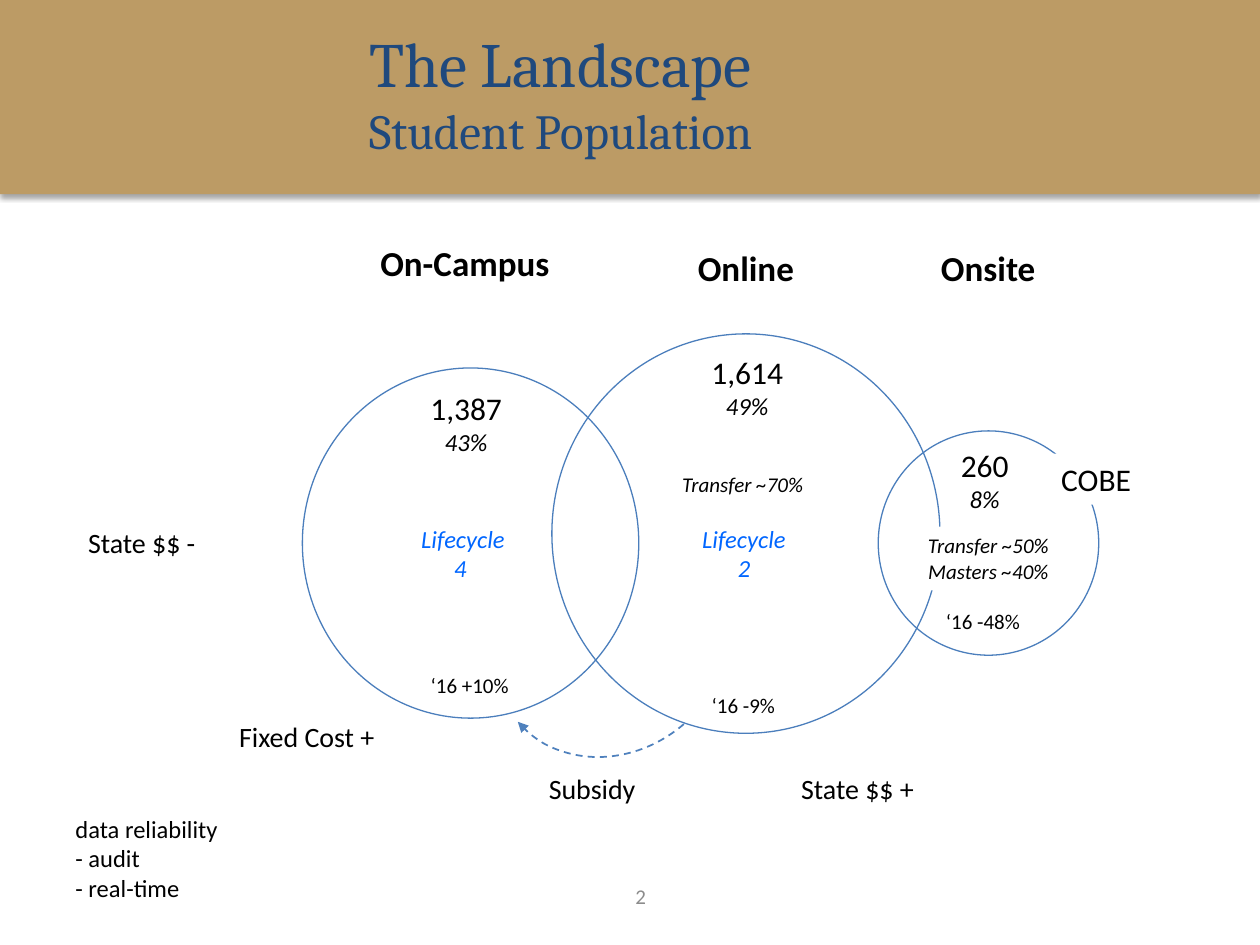
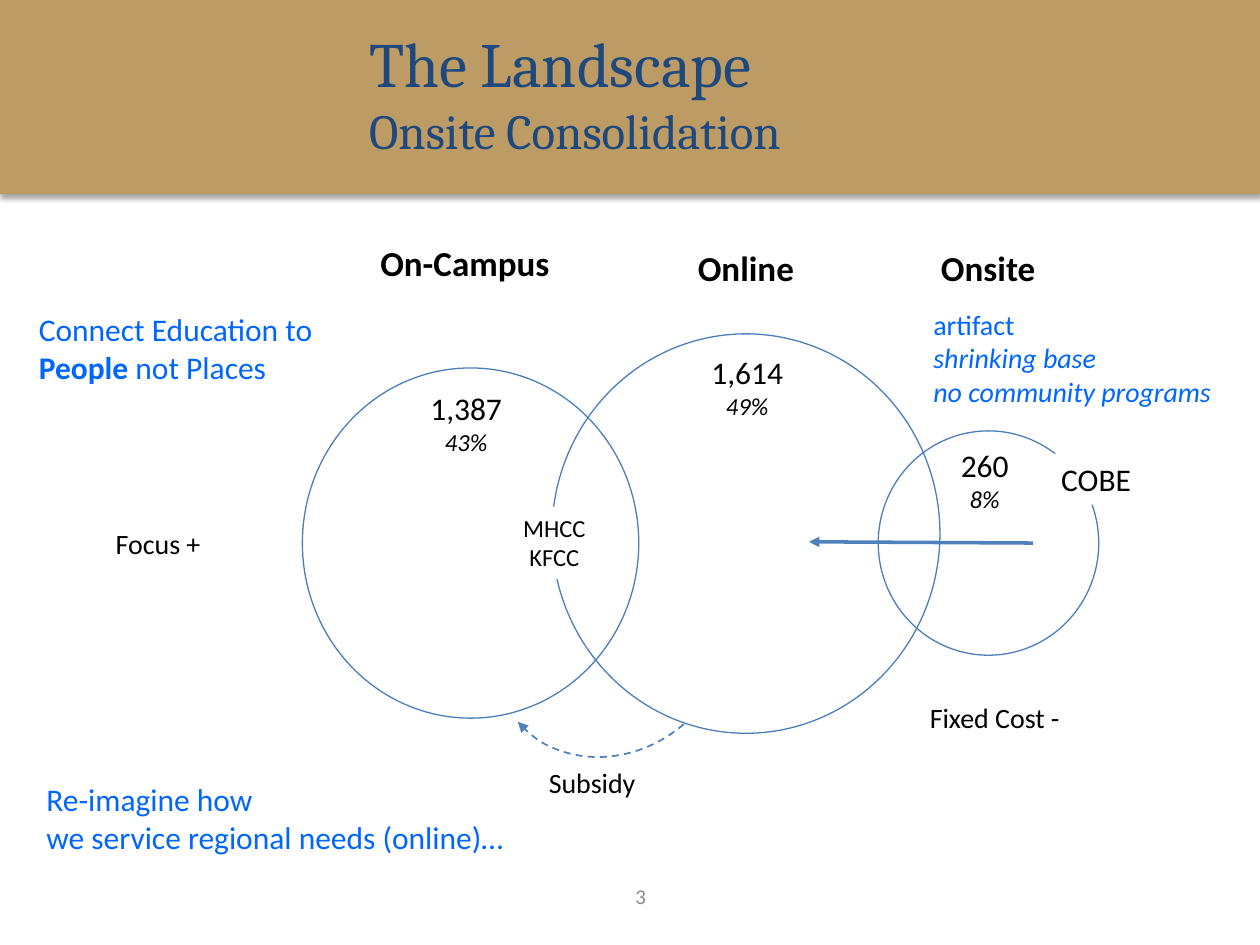
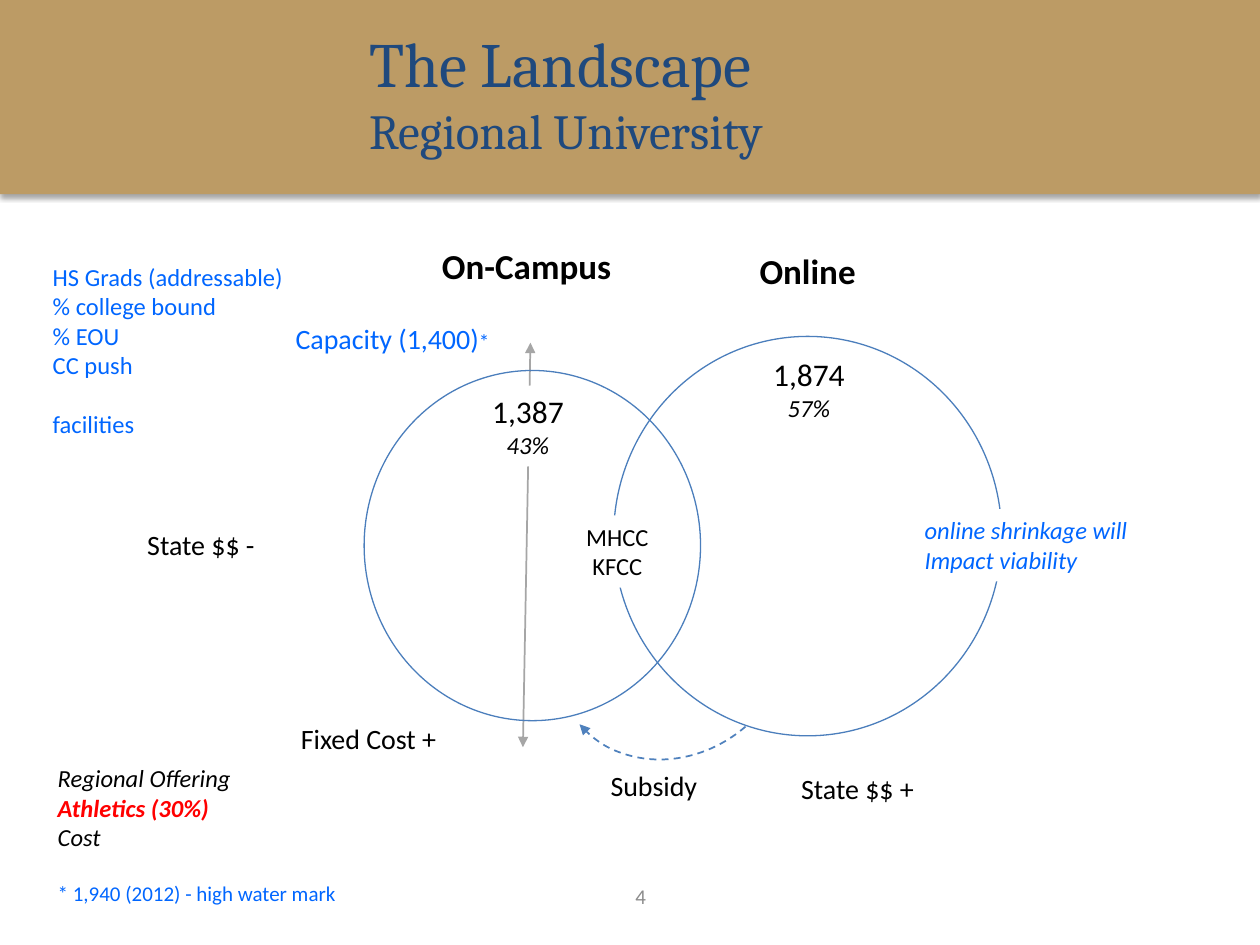
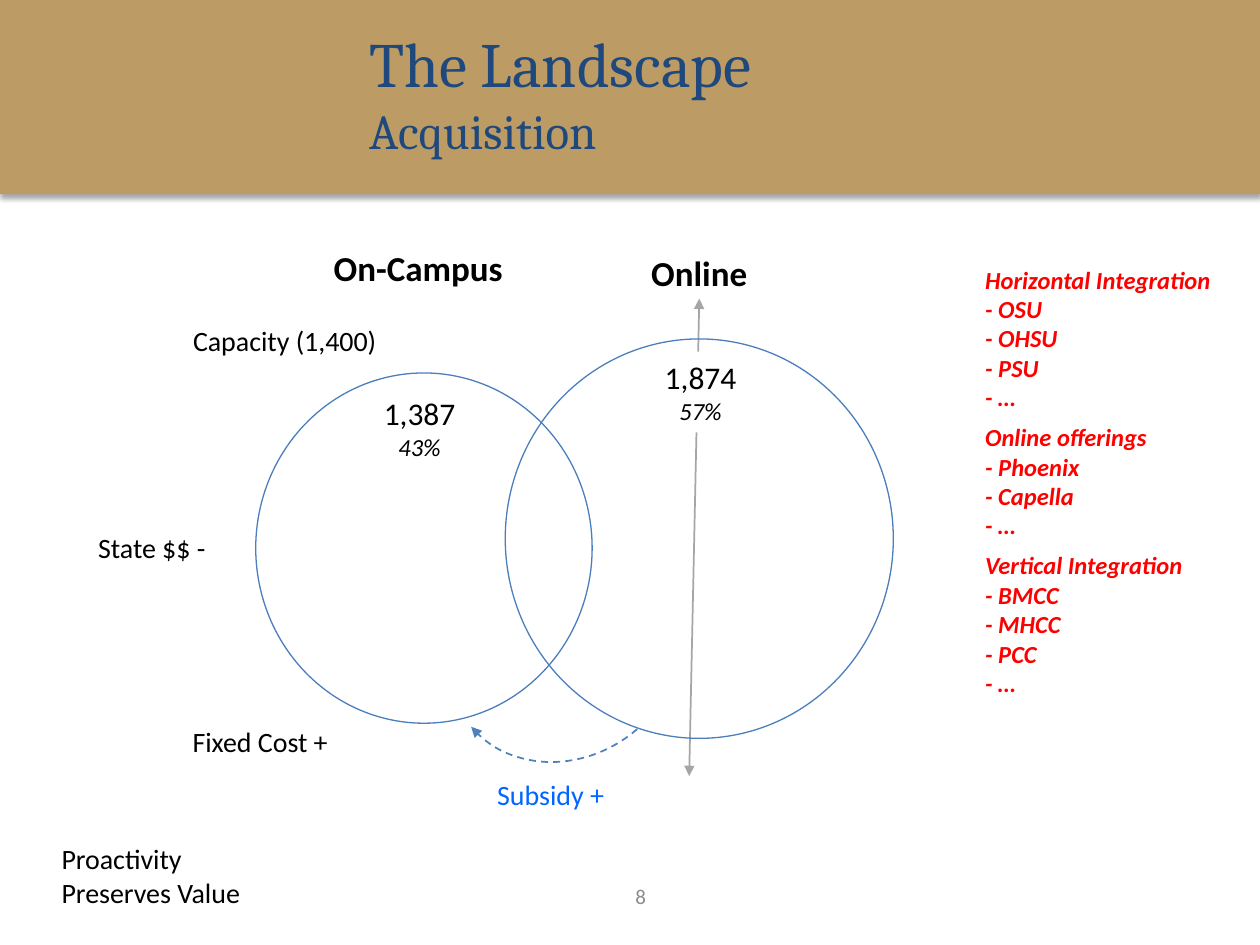
"""Build four slides on the student landscape."""
import lxml.etree
import pptx
import pptx.dml.color
import pptx.enum.dml
import pptx.enum.shapes
import pptx.enum.text
import pptx.oxml.ns
import pptx.util

GOLD = pptx.dml.color.RGBColor(0xBC, 0x9B, 0x65)
NAVY = pptx.dml.color.RGBColor(0x1F, 0x49, 0x7D)
RING = pptx.dml.color.RGBColor(0x4B, 0x7E, 0xBC)
BLUE = pptx.dml.color.RGBColor(0x4F, 0x81, 0xBD)
VIVID = pptx.dml.color.RGBColor(0x00, 0x66, 0xFF)
RED = pptx.dml.color.RGBColor(0xFF, 0x00, 0x00)
GREY = pptx.dml.color.RGBColor(0xA6, 0xA6, 0xA6)
DIM = pptx.dml.color.RGBColor(0x8C, 0x8C, 0x8C)
BLACK = pptx.dml.color.RGBColor(0x00, 0x00, 0x00)
WHITE = pptx.dml.color.RGBColor(0xFF, 0xFF, 0xFF)

LEFT = pptx.enum.text.PP_ALIGN.LEFT
MID = pptx.enum.text.PP_ALIGN.CENTER
SHAPE = pptx.enum.shapes.MSO_SHAPE
LEADING = 1.22


def inches(*sizes):
    """Turn numbers into lengths."""
    return [pptx.util.Inches(size) for size in sizes]


def child(parent, tag, **attrs):
    """Add a drawing element to its parent."""
    return lxml.etree.SubElement(parent, pptx.oxml.ns.qn(tag), attrs)


def write(para, text, size, hue, face="Calibri", bold=False, italic=False):
    """Add one run to a paragraph."""
    run = para.add_run()
    run.text = text
    font = run.font
    font.name, font.size = face, pptx.util.Pt(size)
    font.bold, font.italic = bold, italic
    font.color.rgb = hue


def note(slide, left, top, width, lines, size=16, hue=BLACK, align=LEFT,
         fill=None, wrap=False, gaps=None, **style):
    """Add a text box as tall as its lines; a line is a run or a list of runs."""
    gaps = gaps or {}
    rows = [line if isinstance(line, list) else [line] for line in lines]
    rows = [[(run, {}) if isinstance(run, str) else run for run in row] for row in rows]
    points = sum(max(look.get("size", size) for _, look in row) for row in rows)
    height = (points * LEADING + sum(gaps.values())) / 72 + 0.1
    box = slide.shapes.add_textbox(*inches(left, top, width, height))
    if fill is not None:
        box.fill.solid()
        box.fill.fore_color.rgb = fill
    frame = box.text_frame
    frame.word_wrap = wrap
    frame.auto_size = pptx.enum.text.MSO_AUTO_SIZE.SHAPE_TO_FIT_TEXT
    for index, row in enumerate(rows):
        para = frame.paragraphs[0] if index == 0 else frame.add_paragraph()
        para.alignment = align
        if index in gaps:
            para.space_before = pptx.util.Pt(gaps[index])
        for text, look in row:
            write(para, text, **{"size": size, "hue": hue, **style, **look})


def stroke(shape, hue, width, head=False, tail=False, dash=None):
    """Style a line and its arrowheads."""
    shape.line.color.rgb = hue
    shape.line.width = pptx.util.Pt(width)
    if dash:
        shape.line.dash_style = dash
    edge = shape.element.spPr.find(pptx.oxml.ns.qn("a:ln"))
    for tag, wanted in (("a:headEnd", head), ("a:tailEnd", tail)):
        if wanted:
            child(edge, tag, type="triangle")


def arrow(slide, start, end, hue, width, head=False):
    """Draw a straight arrow."""
    kind = pptx.enum.shapes.MSO_CONNECTOR.STRAIGHT
    line = slide.shapes.add_connector(kind, *inches(*start, *end))
    stroke(line, hue, width, head, True)
    child(line.element.spPr, "a:effectLst")


def outline(slide, kind, left, top, width, height):
    """Add an unfilled shape without shadow."""
    shape = slide.shapes.add_shape(kind, *inches(left, top, width, height))
    shape.shadow.inherit = False
    shape.fill.background()
    return shape


def ring(slide, left, top, width, height):
    """Draw one circle of the diagram."""
    stroke(outline(slide, SHAPE.OVAL, left, top, width, height), RING, 0.75)


def band(slide, layout):
    """Put the gold band on the layout behind everything."""
    bar = slide.shapes.add_shape(SHAPE.RECTANGLE, *inches(0, -0.01, 10, 1.55))
    bar.fill.solid()
    bar.fill.fore_color.rgb = GOLD
    bar.line.fill.background()
    bar.shadow.inherit = False
    effects = bar.element.spPr.find(pptx.oxml.ns.qn("a:effectLst"))
    shade = child(effects, "a:outerShdw", blurRad="39370", dist="22860",
                  dir="5400000", rotWithShape="0")
    child(child(shade, "a:srgbClr", val="000000"), "a:alpha", val="35000")
    bar.element.nvSpPr.cNvPr.id = 99
    layout.shapes.element.insert(2, bar.element)


def page(deck, topic, number):
    """Add a slide with its title and page number."""
    layout = deck.slide_layouts[5]
    slide = deck.slides.add_slide(layout)
    if len(deck.slides) == 1:
        band(slide, layout)
    title = slide.shapes.title
    title.left, title.top, title.width, title.height = inches(2.83, 0.16, 6.92, 1.14)
    frame = title.text_frame
    frame.word_wrap = True
    frame.auto_size = pptx.enum.text.MSO_AUTO_SIZE.NONE
    frame.vertical_anchor = pptx.enum.text.MSO_ANCHOR.MIDDLE
    for para, text, size in ((frame.paragraphs[0], "The Landscape", 36),
                             (frame.add_paragraph(), topic, 28)):
        para.alignment = LEFT
        write(para, text, size, NAVY, "Cambria")
    note(slide, 3.92, 6.96, 2.33, [number], 12, DIM, MID, wrap=True)
    return slide


def count(slide, left, top, width, total, share, fill=None):
    """Write a head count over its share."""
    note(slide, left, top, width, [total, (share, {"size": 14, "italic": True})],
         18, align=MID, fill=fill)


def venn(slide, left, top, online, share, fills=(None, None)):
    """Draw the campus and online circles with the subsidy arc."""
    ring(slide, left, top + 1.05, 2.67, 2.78)
    ring(slide, left + 1.98, top + 0.78, 3.08, 3.17)
    note(slide, left + 0.52, top, 1.56, ["On-Campus"], 20, bold=True)
    note(slide, left + 3.04, top + 0.04, 0.97, ["Online"], 20, bold=True)
    count(slide, left + 0.91, top + 1.17, 0.78, "1,387", "43%", fills[0])
    count(slide, left + 3.14, top + 0.88, 0.78, online, share, fills[1])
    arc = outline(slide, SHAPE.ARC, left + 1.47, top + 2.34, 1.97, 1.75)
    arc.rotation = 139.2
    stroke(arc, BLUE, 1, tail=True, dash=pptx.enum.dml.MSO_LINE.DASH)


def onsite(slide, left, top):
    """Draw the onsite circle with its heading and labels."""
    note(slide, left + 0.4, top, 0.96, ["Onsite"], 20, bold=True)
    ring(slide, left, top + 1.51, 1.75, 1.78)
    count(slide, left + 0.55, top + 1.58, 0.59, "260", "8%")
    note(slide, left + 1.35, top + 1.69, 0.76, ["COBE"], 18, align=MID, fill=WHITE)


def subsidy(slide, left, top, text="Subsidy", width=0.9, hue=BLACK):
    """Label the subsidy arc."""
    note(slide, left, top, width, [text], hue=hue, align=MID)


def fixed(slide, left, top, text="Fixed Cost + ", width=1.34):
    """Label the fixed cost."""
    note(slide, left, top, width, [text], align=MID)


def shared(slide, left, top):
    """Name the colleges in the overlap."""
    note(slide, left, top, 0.7, ["MHCC", "KFCC"], 14, align=MID, fill=WHITE)


def people(deck):
    """Build the student population slide."""
    slide = page(deck, "Student Population", "2")
    venn(slide, 2.4, 1.87, "1,614", "49%")
    onsite(slide, 6.97, 1.91)
    for left, top, width, text in ((7.41, 4.78, 0.8, "‘16 -48%"),
                                   (5.55, 5.45, 0.71, "‘16 -9%"),
                                   (3.32, 5.29, 0.83, "‘16 +10%")):
        note(slide, left, top, width, [text], 12)
    for left, cycle in ((3.24, "4 "), (5.47, "2")):
        note(slide, left, 4.11, 0.87, ["Lifecycle", cycle], 14, VIVID, MID, italic=True)
    note(slide, 0.6, 4.12, 1.11, [["State $$ -", (" ", {"size": 14, "italic": True})]])
    fixed(slide, 1.79, 5.66)
    subsidy(slide, 4.25, 6.07)
    note(slide, 6.26, 6.07, 1.11, ["State $$ +"])
    note(slide, 5.31, 3.69, 1.17, ["Transfer ~70%"], 12, align=MID, italic=True)
    note(slide, 7.26, 4.18, 1.17, ["Transfer ~50%", "Masters ~40%"], 12,
         align=MID, fill=WHITE, italic=True)
    note(slide, 0.5, 6.41, 1.35, ["data reliability", "- audit", "- real-time"], 14)


def merge(deck):
    """Build the onsite consolidation slide."""
    slide = page(deck, "Onsite Consolidation", "3")
    venn(slide, 2.4, 1.87, "1,614", "49%")
    onsite(slide, 6.97, 1.91)
    note(slide, 0.81, 4.13, 0.94, ["Focus + "], align=MID)
    fixed(slide, 7.27, 5.51, "Fixed Cost - ", 1.3)
    subsidy(slide, 4.25, 6.03)
    arrow(slide, (8.2, 4.31), (6.42, 4.3), BLUE, 2)
    shared(slide, 4.05, 4.02)
    slant = {"italic": True}
    note(slide, 7.31, 2.39, 2.44,
         ["artifact", ("shrinking base", slant), ("no community programs", slant)],
         hue=VIVID)
    note(slide, 0.21, 2.41, 2.4,
         ["Connect Education to", [("People", {"bold": True}), " not Places"]], 18, VIVID)
    note(slide, 0.27, 6.14, 4.13,
         ["Re-imagine how", "we service regional needs (online)…"], 18, VIVID, wrap=True)


def region(deck):
    """Build the regional university slide."""
    slide = page(deck, "Regional University", "4")
    arrow(slide, (4.21, 2.72), (4.15, 5.93), GREY, 1, head=True)
    venn(slide, 2.89, 1.89, "1,874", "57%", (WHITE, None))
    note(slide, 1.06, 4.14, 1.12, ["State $$ - "], align=MID)
    fixed(slide, 2.28, 5.68)
    subsidy(slide, 4.74, 6.05)
    note(slide, 2.22, 2.5, 1.84, [["Capacity (1,400)", ("*", {"size": 12}), " "]],
         hue=VIVID, align=MID)
    shared(slide, 4.55, 4.09)
    note(slide, 0.36, 6.01, 1.59,
         ["Regional Offering", ("Athletics (30%)", {"hue": RED, "bold": True}), "Cost"],
         14, italic=True)
    note(slide, 6.26, 6.07, 1.11, ["State $$ +"])
    note(slide, 0.32, 2.03, 2.05,
         ["HS Grads (addressable)", "% college bound", "% EOU", "CC push", "facilities"],
         14, VIVID, gaps={4: 17})
    note(slide, 7.24, 4.04, 1.87, ["online shrinkage will", "Impact viability"], 14,
         VIVID, fill=WHITE, italic=True)
    note(slide, 0.36, 6.94, 5.47, ["* 1,940 (2012) - high water mark"], 12, VIVID, wrap=True)


def acquire(deck):
    """Build the acquisition slide."""
    slide = page(deck, "Acquisition", "8")
    arrow(slide, (5.55, 2.37), (5.47, 6.16), GREY, 1, head=True)
    venn(slide, 2.03, 1.91, "1,874", "57%", (WHITE, WHITE))
    note(slide, 0.67, 4.16, 1.12, ["State $$ - "], align=MID)
    fixed(slide, 1.42, 5.7)
    subsidy(slide, 3.84, 6.12, "Subsidy +", 1.06, VIVID)
    note(slide, 1.42, 2.52, 1.73, ["Capacity (1,400) "], align=MID)
    note(slide, 7.72, 2.05, 2.01,
         ["Horizontal Integration", "- OSU", "- OHSU", "- PSU", "- …",
          "Online offerings", "- Phoenix", "- Capella", "- …",
          "Vertical Integration", "- BMCC", "- MHCC", "- PCC", "- …"],
         14, RED, gaps={5: 6, 9: 6}, bold=True, italic=True)
    note(slide, 0.39, 6.63, 1.64, ["Proactivity", "Preserves Value"])


def main():
    """Build and save the deck."""
    deck = pptx.Presentation()
    deck.slide_width, deck.slide_height = inches(10, 7.5)
    for build in (people, merge, region, acquire):
        build(deck)
    deck.save("out.pptx")


if __name__ == "__main__":
    main()
